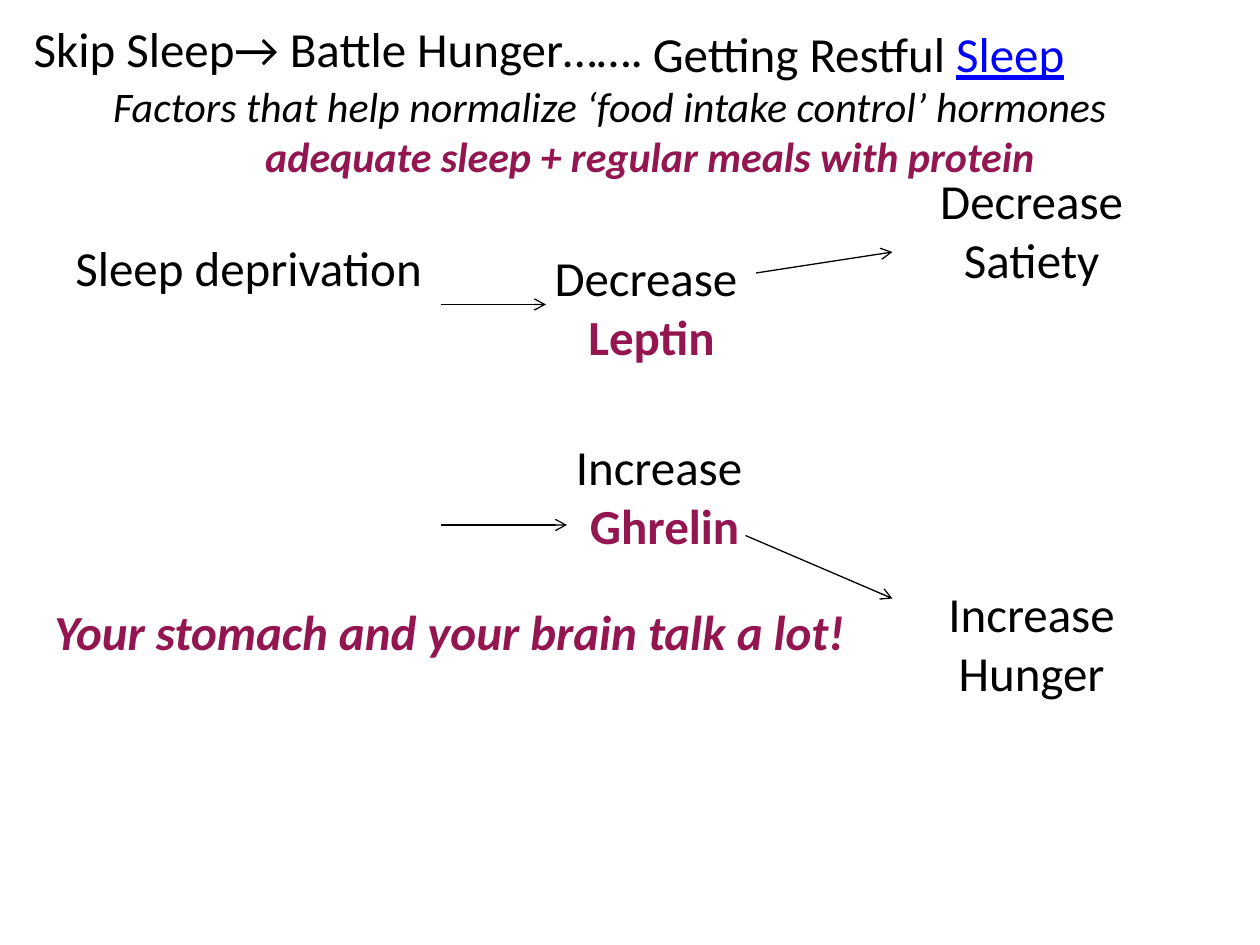
from lxml import etree
from pptx import Presentation
from pptx.dml.color import RGBColor
from pptx.enum.shapes import MSO_CONNECTOR
from pptx.enum.text import MSO_ANCHOR, MSO_AUTO_SIZE, PP_ALIGN
from pptx.oxml.ns import qn
from pptx.util import Pt

STRAIGHT = MSO_CONNECTOR.STRAIGHT
TOP = MSO_ANCHOR.TOP
FIT_SHAPE = MSO_AUTO_SIZE.SHAPE_TO_FIT_TEXT
LEFT, CENTER = PP_ALIGN.LEFT, PP_ALIGN.CENTER

TITLE_ONLY = 5
FONT = "Calibri"
BLACK, PLUM, BLUE = "000000", "941651", "0000FF"
LINE_H, PAIR_H = 41, 75  # heights of one-line and two-line labels


def rgb(hex_color):
    return RGBColor.from_string(hex_color)


def format_run(r, size=28, color=BLACK, bold=False, italic=False, underline=False):
    f = r.font
    f.name, f.size = FONT, Pt(size)
    f.bold, f.italic, f.underline = bold, italic, underline
    f.color.rgb = rgb(color)


def format_frame(tf, align=LEFT, wrap=False):
    tf.word_wrap = wrap
    tf.auto_size = FIT_SHAPE
    tf.vertical_anchor = TOP
    for p in tf.paragraphs:
        p.alignment = align


def add_text(s, box, text, align=LEFT, wrap=False, **style):
    """Add a text box with one paragraph per line of text; return its frame."""
    tf = s.shapes.add_textbox(*map(Pt, box)).text_frame
    tf.text = text
    format_frame(tf, align, wrap)
    for p in tf.paragraphs:
        format_run(p.runs[0], **style)
    return tf


def add_hormone(s, left, top, width, change, hormone):
    tf = add_text(s, (left, top, width, PAIR_H), f"{change} \n{hormone}", CENTER)
    format_run(tf.paragraphs[1].runs[0], color=PLUM, bold=True)


def add_arrow(s, x1, y1, x2, y2):
    c = s.shapes.add_connector(STRAIGHT, Pt(x1), Pt(y1), Pt(x2), Pt(y2))
    c.line.width = Pt(0.75)
    c.line.color.rgb = rgb(BLACK)
    etree.SubElement(c.line._get_or_add_ln(), qn("a:tailEnd"), type="arrow")
    etree.SubElement(c._element.spPr, qn("a:effectLst"))


def add_title(s):
    sp = s.shapes.title
    sp.left, sp.top, sp.width, sp.height = map(Pt, (12, 7, 369.5, LINE_H))
    sp.text_frame.text = "Skip Sleep→ Battle Hunger……."
    format_frame(sp.text_frame)
    format_run(sp.text_frame.paragraphs[0].runs[0])

    tf = add_text(s, (366, 10, 285, LINE_H), "Getting Restful ", wrap=True)
    r = tf.paragraphs[0].add_run()
    r.text = "Sleep"
    format_run(r, color=BLUE, underline=True)


def add_factors(s):
    tf = add_text(s, (57.5, 42.5, 630, 65.5),
                  "Factors that help normalize ‘food intake control’ hormones\n"
                  "adequate sleep + regular meals with protein",
                  wrap=True, size=24, italic=True)
    p = tf.paragraphs[1]
    p._p.get_or_add_pPr().set("marL", str(Pt(87)))
    format_run(p.runs[0], size=24, color=PLUM, bold=True, italic=True)


def main():
    prs = Presentation()
    prs.slide_width, prs.slide_height = Pt(720), Pt(540)
    s = prs.slides.add_slide(prs.slide_layouts[TITLE_ONLY])

    add_title(s)
    add_factors(s)

    add_text(s, (36, 132, 215, LINE_H), "Sleep deprivation")
    add_hormone(s, 309, 138, 126.5, "Decrease", "Leptin")
    add_hormone(s, 321, 246, 117.5, "Increase", "Ghrelin")
    add_text(s, (505.5, 94, 168, PAIR_H), "Decrease Satiety", CENTER, wrap=True)
    add_text(s, (534, 330, 111, PAIR_H), "Increase \nHunger", CENTER)
    add_text(s, (24, 340, 481.5, LINE_H), "Your stomach and your brain talk a lot!",
             color=PLUM, bold=True, italic=True)

    for ends in ((252, 174, 312, 174), (252, 300, 324, 300),
                 (432, 156, 510, 144), (426, 306, 510, 342)):
        add_arrow(s, *ends)

    prs.save("out.pptx")


if __name__ == "__main__":
    main()
